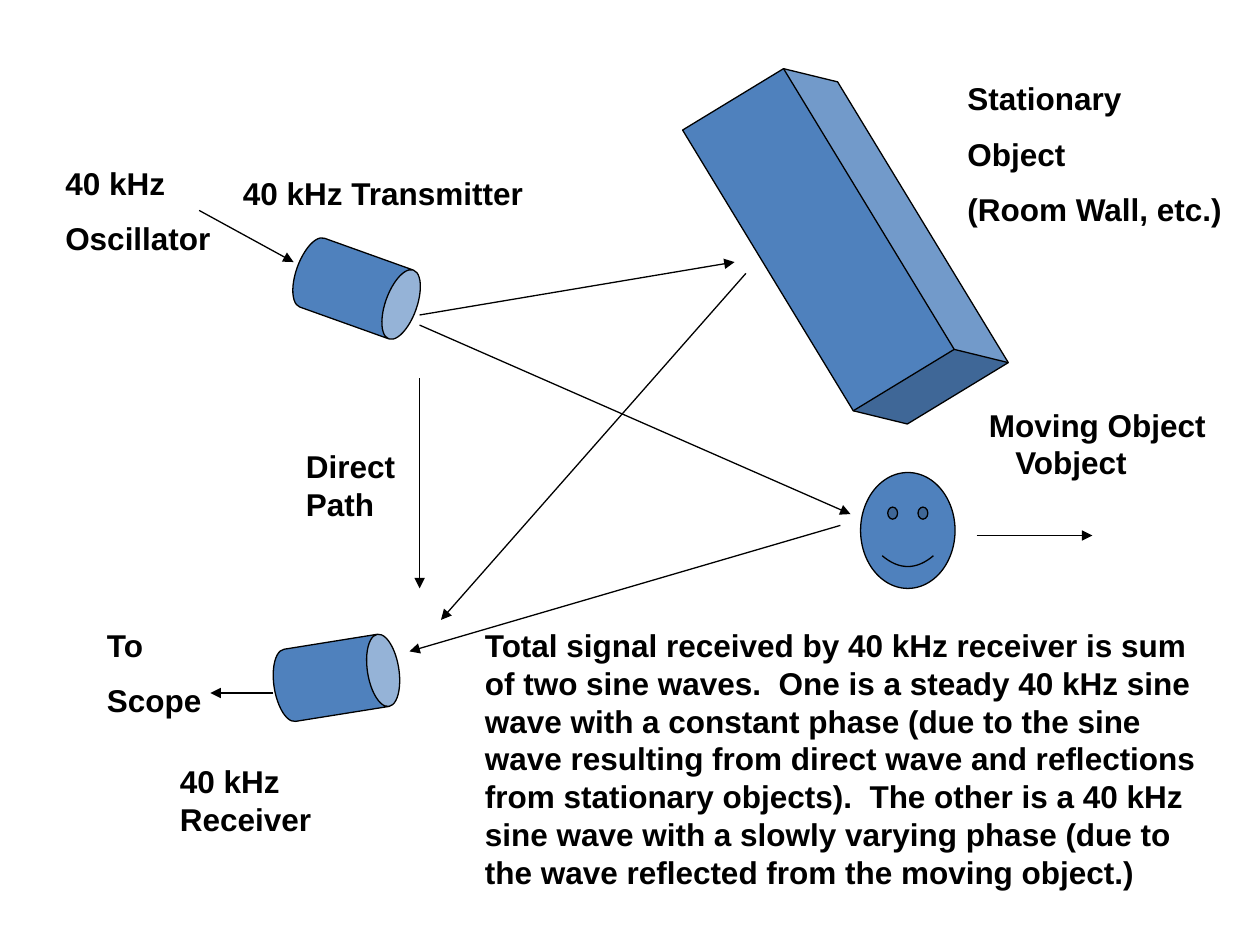
from lxml import etree
from pptx import Presentation
from pptx import util as u
from pptx.dml import color
from pptx.enum import shapes, text
from pptx.oxml import ns

BLACK = "000000"
BLUE = "4F81BD"


def rgb(value):
    return color.RGBColor.from_string(value)


class Diagram:
    """Holds the style and the current slide, and draws each kind of element."""

    font_name = "Arial"
    font_size = u.Pt(18)
    line_width = u.Pt(0.75)
    paragraph_gap = u.Pt(10)

    def __init__(self, slide):
        self.slide = slide

    def outline(self, line):
        line.color.rgb = rgb(BLACK)
        line.width = self.line_width

    def solid(self, kind, left, top, width, height, rotation=0, adjustment=None):
        shape = self.slide.shapes.add_shape(
            kind, u.Inches(left), u.Inches(top), u.Inches(width), u.Inches(height))
        shape.rotation = rotation
        if adjustment is not None:
            shape.adjustments[0] = adjustment
        shape.shadow.inherit = False
        shape.fill.solid()
        shape.fill.fore_color.rgb = rgb(BLUE)
        self.outline(shape.line)

    def arrow(self, start, end):
        connector = self.slide.shapes.add_connector(
            shapes.MSO_CONNECTOR.STRAIGHT, *(u.Inches(value) for value in start + end))
        self.outline(connector.line)
        line = connector.line._get_or_add_ln()
        etree.SubElement(line, ns.qn("a:tailEnd"), type="triangle")
        etree.SubElement(connector._element.spPr, ns.qn("a:effectLst"))

    def label(self, left, top, width, height, *lines):
        box = self.slide.shapes.add_textbox(
            u.Inches(left), u.Inches(top), u.Inches(width), u.Inches(height))
        frame = box.text_frame
        frame.word_wrap = True
        frame.auto_size = text.MSO_AUTO_SIZE.SHAPE_TO_FIT_TEXT
        for index, line in enumerate(lines):
            paragraph = frame.add_paragraph() if index else frame.paragraphs[0]
            paragraph.space_before = self.paragraph_gap if index else u.Pt(0)
            run = paragraph.add_run()
            run.text = line
            run.font.name = self.font_name
            run.font.size = self.font_size
            run.font.bold = True
            run.font.color.rgb = rgb(BLACK)
        return frame


def indent_last_line(frame, indent):
    paragraph = frame.paragraphs[-1]
    paragraph.space_before = u.Pt(0)
    properties = paragraph._p.get_or_add_pPr()
    properties.set("marL", str(u.Inches(indent)))
    properties.set("indent", "0")


def main():
    presentation = Presentation()
    presentation.slide_width = u.Inches(10)
    presentation.slide_height = u.Inches(7.5)
    diagram = Diagram(presentation.slides.add_slide(presentation.slide_layouts[6]))

    kinds = shapes.MSO_SHAPE
    diagram.solid(kinds.CAN, 2.54, 1.79, 0.58, 1, 109.7, 0.43)
    diagram.solid(kinds.CAN, 2.38, 4.88, 0.58, 1, 80.9, 0.43)
    diagram.solid(kinds.SMILEY_FACE, 6.83, 3.75, 0.75, 0.92)
    diagram.solid(kinds.CUBE, 5.25, 1.33, 2.92, 1.25, 58.7, 0.25)

    for start, end in (
        ((1.58, 1.67), (2.33, 2.08)),
        ((3.33, 2.5), (5.83, 2.08)),
        ((5.92, 2.17), (3.5, 4.92)),
        ((3.33, 2.58), (6.75, 4.08)),
        ((6.67, 4.17), (3.25, 5.17)),
        ((3.33, 3), (3.33, 4.67)),
        ((7.75, 4.25), (8.67, 4.25)),
        ((2.17, 5.5), (1.67, 5.5)),
    ):
        diagram.arrow(start, end)

    diagram.label(0.42, 1.25, 1.5, 0.85, "40 kHz", "Oscillator")
    diagram.label(1.83, 1.33, 2.67, 0.4, "40 kHz Transmitter")
    diagram.label(7.58, 0.58, 2.42, 1.3, "Stationary", "Object", "(Room Wall, etc.)")
    diagram.label(2.33, 3.5, 1.42, 0.7, "Direct Path")
    moving = diagram.label(7.75, 3.17, 1.92, 1, "Moving Object", "Vobject")
    indent_last_line(moving, 0.21)
    diagram.label(0.75, 4.92, 1.08, 0.85, "To", "Scope")
    diagram.label(1.33, 6, 2.08, 0.7, "40 kHz Receiver")
    diagram.label(
        3.75, 4.92, 5.92, 2.2,
        "Total signal received by 40 kHz receiver is sum of two sine waves.  "
        "One is a steady 40 kHz sine wave with a constant phase (due to the sine "
        "wave resulting from direct wave and reflections from stationary objects).  "
        "The other is a 40 kHz sine wave with a slowly varying phase (due to the "
        "wave reflected from the moving object.)")

    presentation.save("out.pptx")


if __name__ == "__main__":
    main()
